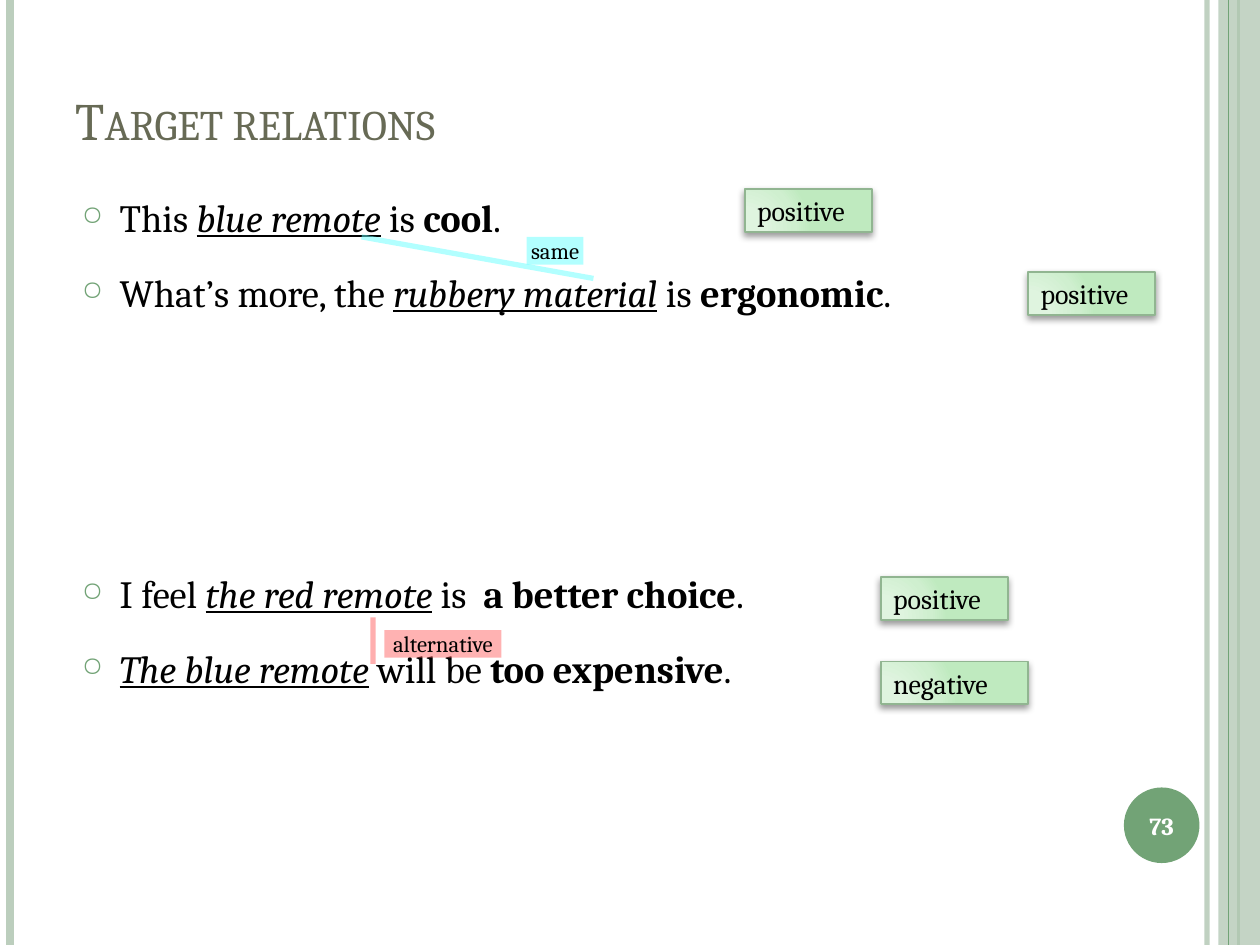
from typing import NamedTuple

from lxml import etree
from pptx import Presentation
from pptx.dml.color import RGBColor
from pptx.enum.shapes import MSO_CONNECTOR, MSO_SHAPE
from pptx.enum.text import MSO_ANCHOR, PP_ALIGN
from pptx.oxml import parse_xml
from pptx.oxml.ns import nsdecls, qn
from pptx.util import Inches, Pt

RECT, OVAL = MSO_SHAPE.RECTANGLE, MSO_SHAPE.OVAL
STRAIGHT = MSO_CONNECTOR.STRAIGHT
MIDDLE, BOTTOM = MSO_ANCHOR.MIDDLE, MSO_ANCHOR.BOTTOM
LEFT, CENTER = PP_ALIGN.LEFT, PP_ALIGN.CENTER

FONT = "Cambria"
BLACK, WHITE = "000000", "FFFFFF"
GREEN, PALE, OLIVE = "72A376", "BCCEBD", "676A55"
RED, CYAN = "FF6666", "66FFFF"
STOPS = ((0, "E1F5E1"), (30, "DFF4DF"), (75, "CFEFCF"), (100, "BFEABF"))


class Rule(NamedTuple):
    x1: float
    y1: float
    x2: float
    y2: float
    hue: str
    width: float
    alpha: int = 100


class Box(NamedTuple):
    text: str
    x: float
    y: float
    w: float
    h: float = 0.34
    hue: str = GREEN


class Line(NamedTuple):
    """A sentence: *target* is italic and underlined, opinion is bold."""
    lead: str
    target: str
    link: str
    opinion: str
    before: float = 6


RAILS = [
    Rule(9.58, 0, 9.58, 7.5, PALE, 3, 93),
    Rule(0.08, 0, 0.08, 7.5, PALE, 4.5),
    Rule(9.83, 0, 9.83, 7.5, GREEN, 1.5),
]
EDGE = Rule(9.75, 0, 9.75, 7.5, GREEN, 0.75)
LINES = [
    Line("This ", "blue remote", " is ", "cool"),
    Line("What’s more, the ", "rubbery material", " is ", "ergonomic"),
    Line("I feel ", "the red remote", " is", "  a better choice", 135),
    Line("", "The blue remote", " will be ", "too expensive"),
]
TAGS = [
    Box("positive", 5.91, 1.5, 1.01),
    Box("positive", 8.16, 2.16, 1.01),
    Box("positive", 6.99, 4.58, 1.01),
    Box("negative", 6.99, 5.25, 1.17),
]
LINKS = [
    (Rule(2.96, 4.9, 2.96, 5.27, RED, 3, 52),
     Box("alternative", 3.05, 5, 0.93, 0.22, RED)),
    (Rule(2.87, 1.88, 4.71, 2.21, CYAN, 3, 50),
     Box("same", 4.18, 1.88, 0.45, 0.22, CYAN)),
]


def rgb(code: str) -> RGBColor:
    return RGBColor.from_string(code)


def fade(part, alpha: int) -> None:
    if alpha < 100:
        for hue in part.iter(qn("a:srgbClr")):
            etree.SubElement(hue, qn("a:alpha"), val=str(alpha * 1000))


def draw_rule(slide, rule: Rule) -> None:
    ends = [Inches(v) for v in rule[:4]]
    line = slide.shapes.add_connector(STRAIGHT, *ends)
    line.line.color.rgb = rgb(rule.hue)
    line.line.width = Pt(rule.width)
    props = line._element.spPr
    fade(props, rule.alpha)
    etree.SubElement(props, qn("a:effectLst"))


def draw_box(slide, box: Box, kind=RECT, alpha: int = 100):
    shape = slide.shapes.add_shape(kind, *(Inches(v) for v in box[1:5]))
    shape.shadow.inherit = False
    shape.fill.solid()
    shape.fill.fore_color.rgb = rgb(box.hue)
    fade(shape._element.spPr, alpha)
    shape.line.fill.background()
    return shape


def set_inset(frame, side: float, top: float) -> None:
    frame.margin_left = frame.margin_right = Inches(side)
    frame.margin_top = frame.margin_bottom = Inches(top)


def set_font(para, size: float, hue: str = BLACK) -> None:
    para.font.name = FONT
    para.font.size = Pt(size)
    para.font.color.rgb = rgb(hue)


def write(shape, text: str, size: float, hue: str = BLACK,
          align=CENTER, anchor=MIDDLE):
    frame = shape.text_frame
    frame.vertical_anchor = anchor
    para = frame.paragraphs[0]
    para.text = text
    para.alignment = align
    set_font(para, size, hue)
    return para


def draw_tag(slide, box: Box) -> None:
    """Green label with a radial gradient and a soft shadow."""
    shape = draw_box(slide, box)
    shape.line.color.rgb = rgb("91B591")
    shape.line.width = Pt(1)
    stops = "".join(f'<a:gs pos="{pos * 1000}"><a:srgbClr val="{hue}"/></a:gs>'
                    for pos, hue in STOPS)
    props = shape._element.spPr
    props.replace(props.find(qn("a:solidFill")), parse_xml(
        f'<a:gradFill {nsdecls("a")}><a:gsLst>{stops}</a:gsLst>'
        '<a:path path="circle"><a:fillToRect l="5000" t="100000" '
        'r="120000" b="10000"/></a:path></a:gradFill>'))
    props.find(qn("a:effectLst")).append(parse_xml(
        f'<a:outerShdw {nsdecls("a")} blurRad="{Pt(4)}" dist="{Pt(2)}" '
        f'dir="5400000" rotWithShape="0"><a:srgbClr val="{BLACK}">'
        '<a:alpha val="40000"/></a:srgbClr></a:outerShdw>'))
    write(shape, box.text, 16, align=LEFT)


def draw_link(slide, rule: Rule, box: Box) -> None:
    draw_rule(slide, rule)
    label = draw_box(slide, box, alpha=50)
    set_inset(label.text_frame, 0, 0)
    label.text_frame.word_wrap = False
    write(label, box.text, 13)


def add_bullet(para) -> None:
    props = para._p.get_or_add_pPr()
    props.set("marL", str(Inches(0.3)))
    props.set("indent", str(Inches(-0.3)))
    hue = etree.Element(qn("a:buClr"))
    etree.SubElement(hue, qn("a:srgbClr"), val=GREEN)
    size = etree.Element(qn("a:buSzPct"), val="70000")
    mark = etree.Element(qn("a:buChar"), char="○")
    spot = props.index(props.find(qn("a:defRPr")))
    props[spot:spot] = [hue, size, mark]


def draw_body(slide) -> None:
    body = slide.shapes.add_textbox(
        Inches(0.58), Inches(1.35), Inches(8.05), Inches(4.39))
    frame = body.text_frame
    frame.word_wrap = True
    set_inset(frame, 0.07, 0.04)
    for i, line in enumerate(LINES):
        para = frame.add_paragraph() if i else frame.paragraphs[0]
        para.line_spacing = 1.4
        para.space_before = Pt(line.before)
        set_font(para, 22)
        add_bullet(para)
        for text in (*line[:4], "."):
            if text:
                run = para.add_run()
                run.text = text
                if text == line.target:
                    run.font.italic = run.font.underline = True
                elif text == line.opinion:
                    run.font.bold = True


def draw_title(slide) -> None:
    title = slide.shapes.add_textbox(
        Inches(0.5), Inches(0.3), Inches(8.17), Inches(0.95))
    title.text_frame.word_wrap = True
    para = write(title, "Target relations", 30, OLIVE, LEFT, BOTTOM)
    para.runs[0]._r.get_or_add_rPr().set("cap", "small")


def main() -> None:
    deck = Presentation()
    deck.slide_width, deck.slide_height = Inches(10), Inches(7.5)
    slide = deck.slides.add_slide(deck.slide_layouts[6])

    # Side bands and page number
    for rail in RAILS:
        draw_rule(slide, rail)
    draw_box(slide, Box("", 9.67, 0, 0.33, 7.5, PALE), alpha=87)
    draw_rule(slide, EDGE)
    page = draw_box(slide, Box("73", 8.92, 6.25, 0.6, 0.6), OVAL)
    set_inset(page.text_frame, 0, 0)
    write(page, "73", 14, WHITE).font.bold = True

    # Sentences and title
    draw_body(slide)
    draw_title(slide)

    # Polarity tags and relations between targets
    for tag in TAGS:
        draw_tag(slide, tag)
    for rule, box in LINKS:
        draw_link(slide, rule, box)

    deck.save("out.pptx")


if __name__ == "__main__":
    main()
